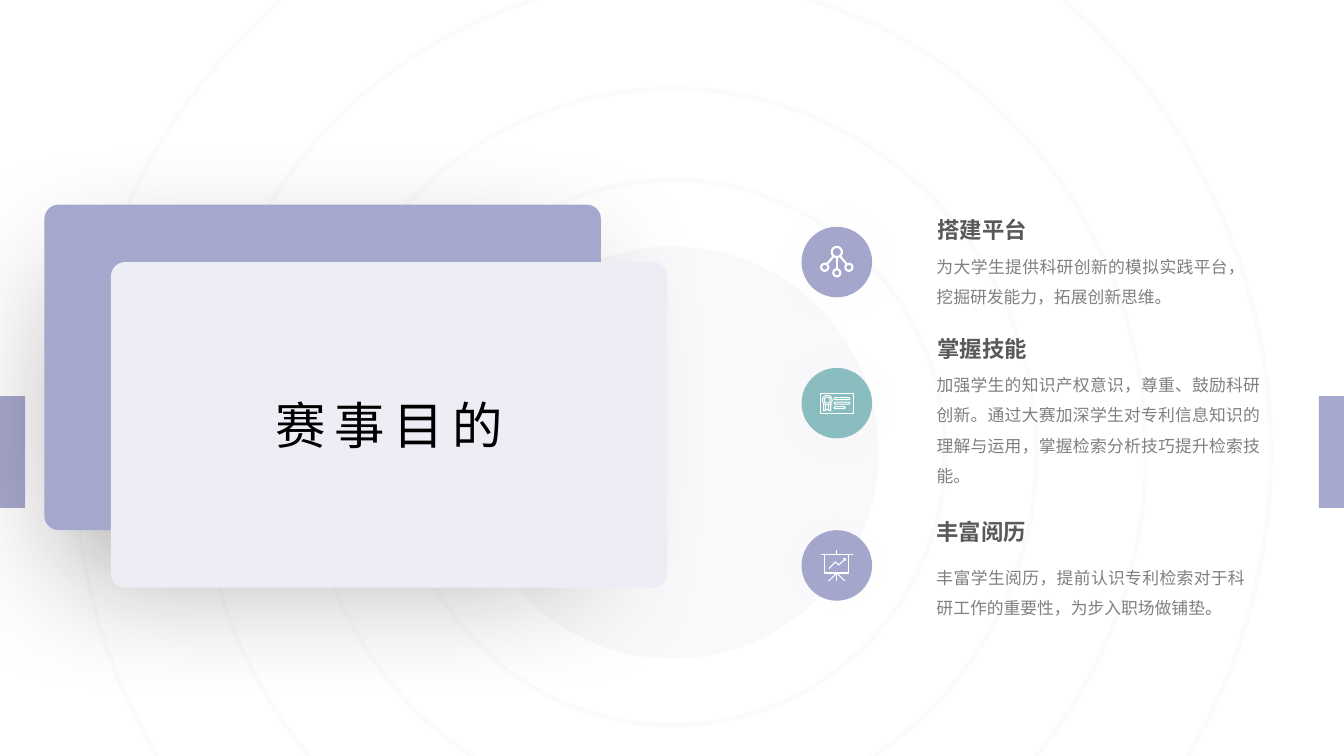
import math
from dataclasses import dataclass

import lxml.etree
import pptx
import pptx.dml.color
import pptx.enum.shapes
import pptx.enum.text
import pptx.oxml
import pptx.oxml.ns
import pptx.util

Inches = pptx.util.Inches
Pt = pptx.util.Pt
MSO = pptx.enum.shapes.MSO_SHAPE
qn = pptx.oxml.ns.qn


@dataclass
class Theme:
    font: str = "Noto Sans CJK SC"
    lavender: str = "A6A7CD"
    teal: str = "8BBEC1"
    pale: str = "EDEDF5"
    ring: str = "D9DDE0"
    white: str = "FFFFFF"
    title: str = "000000"
    heading: str = "595959"
    body: str = "808080"
    title_size: int = 36
    heading_size: int = 16
    body_size: int = 12


theme = Theme()


def paint(shape, fill=None, line=None, width=1, alpha=100, shadow=None):
    """Set fill, line, opacity in percent and an optional shadow (colour, attributes, opacity)."""
    shape.shadow.inherit = False
    if fill:
        shape.fill.solid()
        shape.fill.fore_color.rgb = pptx.dml.color.RGBColor.from_string(fill)
    else:
        shape.fill.background()
    if line:
        shape.line.color.rgb = pptx.dml.color.RGBColor.from_string(line)
        shape.line.width = Pt(width)
    else:
        shape.line.fill.background()
    properties = shape._element.spPr
    if alpha < 100:
        for color in properties.iter(qn("a:srgbClr")):
            lxml.etree.SubElement(color, qn("a:alpha"), val=str(alpha * 1000))
    if shadow:
        shadow_color, attributes, opacity = shadow
        effects = properties.find(qn("a:effectLst"))
        outer = lxml.etree.SubElement(effects, qn("a:outerShdw"), rotWithShape="0", **attributes)
        color = lxml.etree.SubElement(outer, qn("a:srgbClr"), val=shadow_color)
        lxml.etree.SubElement(color, qn("a:alpha"), val=str(opacity * 1000))


def circle(x, y, radius, steps=32):
    """Points of a closed circle."""
    angles = [2 * math.pi * step / steps for step in range(steps + 1)]
    return [(x + radius * math.cos(angle), y + radius * math.sin(angle)) for angle in angles]


presentation = pptx.Presentation()
presentation.slide_width = Inches(13.33)
presentation.slide_height = Inches(7.5)
slide = presentation.slides.add_slide(presentation.slide_layouts[6])

# Background: side tabs, concentric rings and disc
backdrop = slide.shapes.add_group_shape().shapes
for left in (0, 13.08):
    tab = backdrop.add_shape(MSO.RECTANGLE, Inches(left), Inches(3.93), Inches(0.25), Inches(1.11))
    paint(tab, fill=theme.lavender)

center_x, center_y = 6.67, 4.49
for diameter in (5.41, 11.87, 9.39, 7.22, 4.09):
    ring = backdrop.add_shape(
        MSO.OVAL, Inches(center_x - diameter / 2), Inches(center_y - diameter / 2),
        Inches(diameter), Inches(diameter))
    if diameter == 4.09:
        paint(ring, fill=theme.lavender, alpha=6)
    else:
        paint(ring, line=theme.ring, width=3, alpha=11)

# Back card with a soft shadow
card_size = Inches(5.52), Inches(3.23)
card_shadow = ("0D0D0D", {"blurRad": str(Pt(100)), "dist": str(Pt(50)), "dir": "5400000",
                          "sx": "90000", "sy": "90000", "algn": "t"}, 40)
back_card = slide.shapes.add_shape(MSO.ROUNDED_RECTANGLE, Inches(0.44), Inches(2.03), *card_size)
back_card.adjustments[0] = 0.044
paint(back_card, fill=theme.lavender, shadow=card_shadow)

# Icon strokes, in thousandths of an inch from the badge centre
network = [circle(0, -100, 50), circle(-120, 52, 35), circle(120, 52, 35), circle(0, 107, 35),
           [(-30, -60), (-100, 23)], [(30, -60), (100, 23)], [(0, -50), (0, 72)]]
certificate = [
    [(-165, -100), (165, -100), (165, 100), (-165, 100), (-165, -100)],
    circle(-95, -30, 48), circle(-95, -30, 30),
    [(-130, 5), (-130, 78), (-95, 62), (-60, 78), (-60, 5)],
    [(-108, 18), (-108, 65)], [(-82, 18), (-82, 65)],
]
for row, right in enumerate((122, 122, 75)):
    y = -45 + 45 * row
    certificate.append([(-20, y - 10), (right, y - 10), (right + 8, y), (right, y + 10),
                        (-20, y + 10), (-28, y), (-20, y - 10)])
board = [[(-160, -105), (160, -105)], [(0, -150), (0, -105)],
         [(-120, -105), (-120, 75), (120, 75), (120, -105)],
         [(0, 75), (-82, 155)], [(0, 75), (0, 155)], [(0, 75), (82, 155)],
         [(-80, 30), (-15, -35), (18, -5), (85, -65)], [(58, -65), (85, -65), (85, -40)]]

# Badges with their icons
icon_shadow = ("000000", {"blurRad": str(Pt(53)), "algn": "ctr"}, 20)
badges = [(2.25, theme.lavender, network, 1.5), (3.65, theme.teal, certificate, 0.75),
          (5.26, theme.lavender, board, 0.75)]
for top, color, strokes, width in badges:
    group = slide.shapes.add_group_shape().shapes
    badge = group.add_shape(MSO.OVAL, Inches(7.95), Inches(top), Inches(0.7), Inches(0.7))
    paint(badge, fill=color)
    builder = group.build_freeform(*strokes[0][0], scale=Inches(1) / 1000)
    for index, stroke in enumerate(strokes):
        if index:
            builder.move_to(*stroke[0])
        builder.add_line_segments(stroke[1:], close=False)
    icon = builder.convert_to_shape(Inches(8.3), Inches(top + 0.35))
    paint(icon, line=theme.white, width=width, shadow=icon_shadow)

# Headings and descriptions: left, top, width, height, text
sections = [
    ((9.2, 2.1, 3.03, 0.37, "搭建平台"),
     (9.19, 2.4, 3.26, 0.67, "为大学生提供科研创新的模拟实践平台，挖掘研发能力，拓展创新思维。")),
    ((9.2, 3.28, 3.18, 0.37, "掌握技能"),
     (9.19, 3.57, 3.41, 1.28, "加强学生的知识产权意识，尊重、鼓励科研创新。通过大赛加深学生对专利信息知识的"
                              "理解与运用，掌握检索分析技巧提升检索技能。")),
    ((9.19, 5.09, 3.03, 0.37, "丰富阅历"),
     (9.19, 5.48, 3.26, 0.67, "丰富学生阅历，提前认识专利检索对于科研工作的重要性，为步入职场做铺垫。")),
]
styled_paragraphs = []
for section in sections:
    group = slide.shapes.add_group_shape().shapes
    for left, top, width, height, text in section:
        box = group.add_textbox(Inches(left), Inches(top), Inches(width), Inches(height))
        box.text_frame.word_wrap = True
        box.text_frame.auto_size = pptx.enum.text.MSO_AUTO_SIZE.SHAPE_TO_FIT_TEXT
        box.text_frame.text = text
        paragraph = box.text_frame.paragraphs[0]
        if text == section[0][-1]:
            styled_paragraphs.append((paragraph, theme.heading_size, theme.heading, True))
        else:
            paragraph.alignment = pptx.enum.text.PP_ALIGN.JUSTIFY
            paragraph.line_spacing = 1.5
            styled_paragraphs.append((paragraph, theme.body_size, theme.body, False))

# Front card with the title
front_card = slide.shapes.add_shape(MSO.ROUNDED_RECTANGLE, Inches(1.1), Inches(2.6), *card_size)
front_card.adjustments[0] = 0.044
paint(front_card, fill=theme.pale)
front_card.text_frame.text = "赛事目的"
front_card.text_frame.vertical_anchor = pptx.enum.text.MSO_ANCHOR.MIDDLE
title = front_card.text_frame.paragraphs[0]
title.alignment = pptx.enum.text.PP_ALIGN.CENTER
styled_paragraphs.append((title, theme.title_size, theme.title, False))

# Fonts, with the same face for East Asian text
for paragraph, size, color, bold in styled_paragraphs:
    run = paragraph.runs[0]
    run.font.name = theme.font
    run.font.size = Pt(size)
    run.font.bold = bold
    run.font.color.rgb = pptx.dml.color.RGBColor.from_string(color)
    lxml.etree.SubElement(run._r.get_or_add_rPr(), qn("a:ea"), typeface=theme.font)
title.runs[0]._r.get_or_add_rPr().set("spc", "600")

presentation.save("out.pptx")
